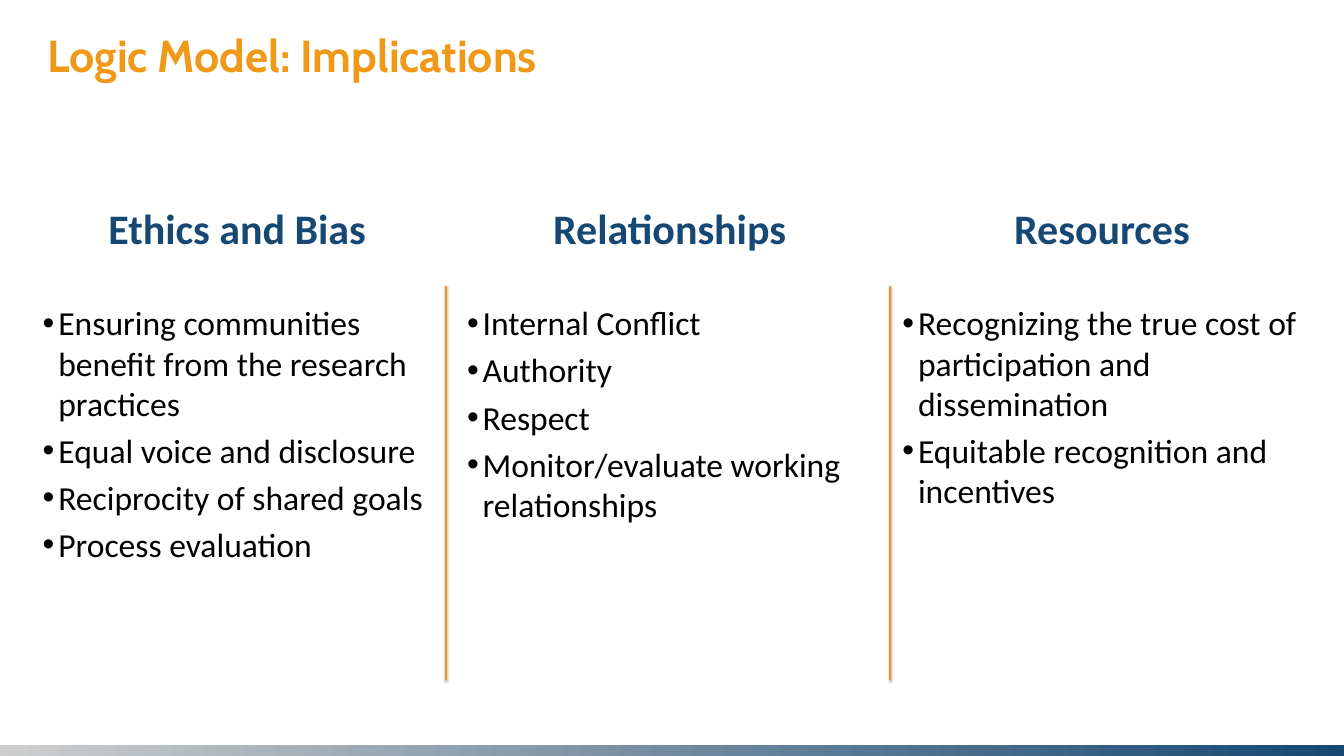
"""Build the logic model implications slide with three bulleted columns."""
from lxml import etree
from pptx import Presentation
from pptx.dml.color import RGBColor
from pptx.enum import shapes, text
from pptx.oxml import ns, parse_xml
from pptx.util import Inches, Pt

COLORS = {"orange": "F09818", "navy": "154872", "grey": "CECECE", "black": "000000"}
COLUMNS = [
    ("Ethics and Bias", 0.75, 7.87, 10.71, [
        "Ensuring communities benefit from the research practices",
        "Equal voice and disclosure",
        "Reciprocity of shared goals",
        "Process evaluation",
    ]),
    ("Relationships", 9.17, 8.42, 8.94, [
        "Internal Conflict",
        "Authority",
        "Respect",
        "Monitor/evaluate working relationships",
    ]),
    ("Resources", 17.81, 8.14, 7, [
        "Recognizing the true cost of participation and dissemination",
        "Equitable recognition and incentives",
    ]),
]
HEADING_LEFT, HEADING_STEP = 1.71, 8.58
DIVIDERS = (8.85, 17.67)


def rgb(name):
    """Return the named colour."""
    return RGBColor.from_string(COLORS[name])


def style(paragraph, size, color, face="Calibri", bold=False):
    """Format the runs of a paragraph."""
    for run in paragraph.runs:
        run.font.name = face
        run.font.size = Pt(size)
        run.font.bold = bold
        run.font.color.rgb = rgb(color)


def add_footer_bar(slide):
    """Add the gradient bar along the bottom edge."""
    bar = slide.shapes.add_shape(
        shapes.MSO_SHAPE.RECTANGLE, 0, Inches(14.79), Inches(26.67), Inches(0.38))
    bar.shadow.inherit = False
    bar.line.fill.background()
    bar.fill.gradient()
    bar.fill.gradient_angle = 0
    for stop, color, position in zip(bar.fill.gradient_stops, ("grey", "navy"), (0, 1)):
        stop.color.rgb = rgb(color)
        stop.position = position


def set_title(slide, wording):
    """Place and format the slide title."""
    title = slide.shapes.title
    title.left, title.top = Inches(0.67), Inches(0.41)
    title.width, title.height = Inches(16.83), Inches(1.6)
    frame = title.text_frame
    frame.text = wording
    frame.margin_left = frame.margin_right = Inches(0.27)
    frame.margin_top = frame.margin_bottom = Inches(0.13)
    frame.vertical_anchor = text.MSO_ANCHOR.TOP
    frame.paragraphs[0].alignment = text.PP_ALIGN.LEFT
    style(frame.paragraphs[0], 64, "orange", "Cabin", True)


def add_text_frame(slide, left, top, width, height):
    """Add a wrapping text box and return its frame."""
    box = slide.shapes.add_textbox(Inches(left), Inches(top), Inches(width), Inches(height))
    box.text_frame.word_wrap = True
    return box.text_frame


def add_heading(slide, wording, left):
    """Add a centred column heading."""
    frame = add_text_frame(slide, left, 3.97, 6, 1.11)
    frame.auto_size = text.MSO_AUTO_SIZE.SHAPE_TO_FIT_TEXT
    frame.text = wording
    frame.paragraphs[0].alignment = text.PP_ALIGN.CENTER
    style(frame.paragraphs[0], 60, "navy", bold=True)


def add_bullets(slide, points, left, width, height):
    """Add a bulleted list with hanging indents."""
    frame = add_text_frame(slide, left, 5.95, width, height)
    frame.text = "\n".join(points)
    for index, paragraph in enumerate(frame.paragraphs):
        properties = paragraph._p.get_or_add_pPr()
        properties.set("marL", str(Inches(0.31)))
        properties.set("indent", str(-Inches(0.31)))
        etree.SubElement(properties, ns.qn("a:buFont"), typeface="Arial")
        etree.SubElement(properties, ns.qn("a:buChar"), char="•")
        if index:
            paragraph.space_before = Pt(9.6)
        style(paragraph, 48, "black")


def add_divider(slide, x):
    """Add a vertical column divider with a soft shadow."""
    divider = slide.shapes.add_connector(
        shapes.MSO_CONNECTOR.STRAIGHT, Inches(x), Inches(5.67), Inches(x), Inches(13.5))
    divider.line.color.rgb = rgb("orange")
    divider.line.width = Pt(3)
    divider._element.spPr.append(parse_xml(
        f'<a:effectLst {ns.nsdecls("a")}>'
        f'<a:outerShdw blurRad="{Pt(3.1)}" dist="{Pt(1.8)}" dir="5400000" rotWithShape="0">'
        f'<a:srgbClr val="{COLORS["black"]}"><a:alpha val="35000"/></a:srgbClr>'
        '</a:outerShdw></a:effectLst>'))


def main():
    """Build and save the slide."""
    deck = Presentation()
    deck.slide_width, deck.slide_height = Inches(26.67), Inches(15)
    slide = deck.slides.add_slide(deck.slide_layouts[5])
    add_footer_bar(slide)
    set_title(slide, "Logic Model: Implications")
    for index, (heading, left, width, height, points) in enumerate(COLUMNS):
        add_heading(slide, heading, HEADING_LEFT + index * HEADING_STEP)
        add_bullets(slide, points, left, width, height)
    for x in DIVIDERS:
        add_divider(slide, x)
    deck.save("out.pptx")


if __name__ == "__main__":
    main()
